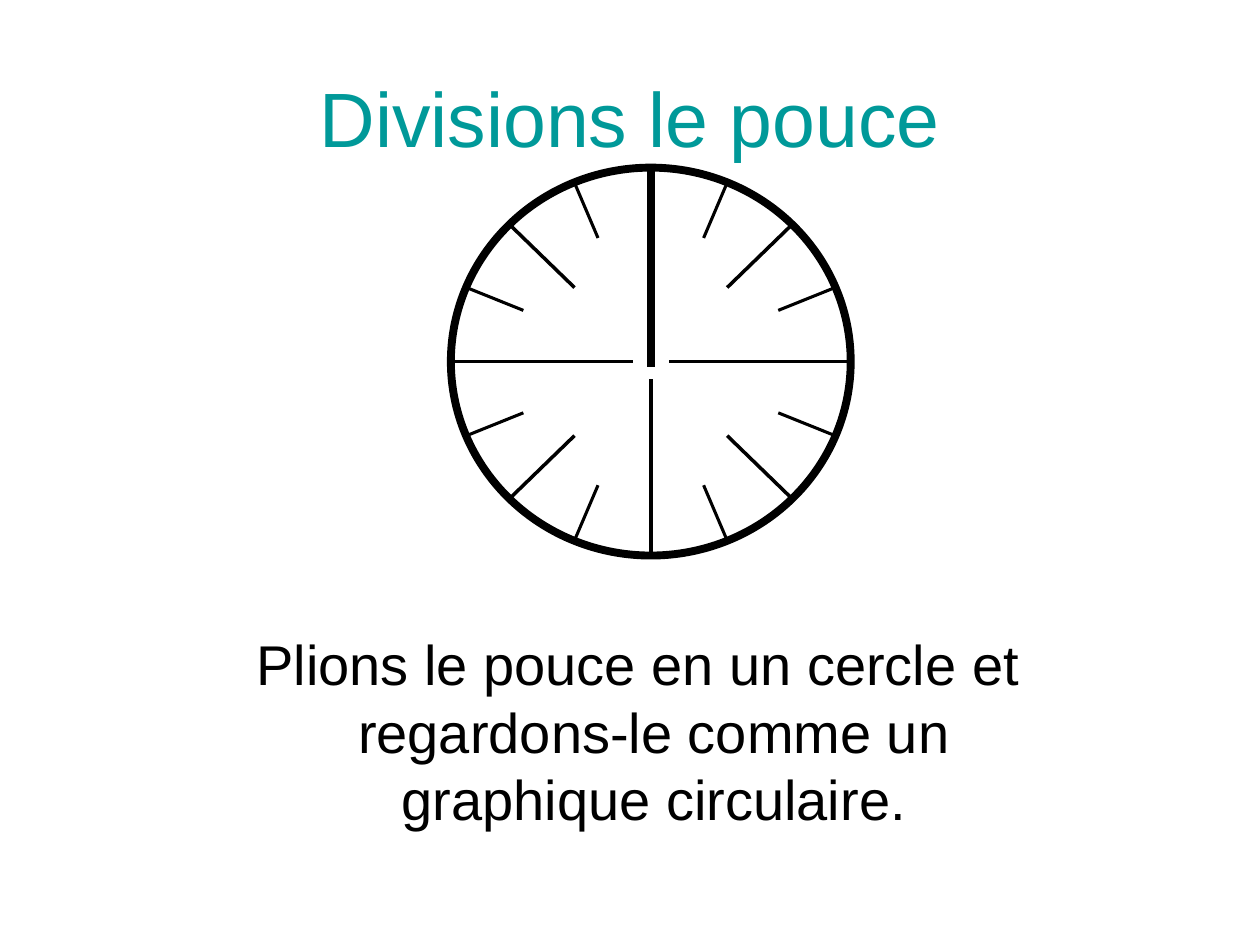
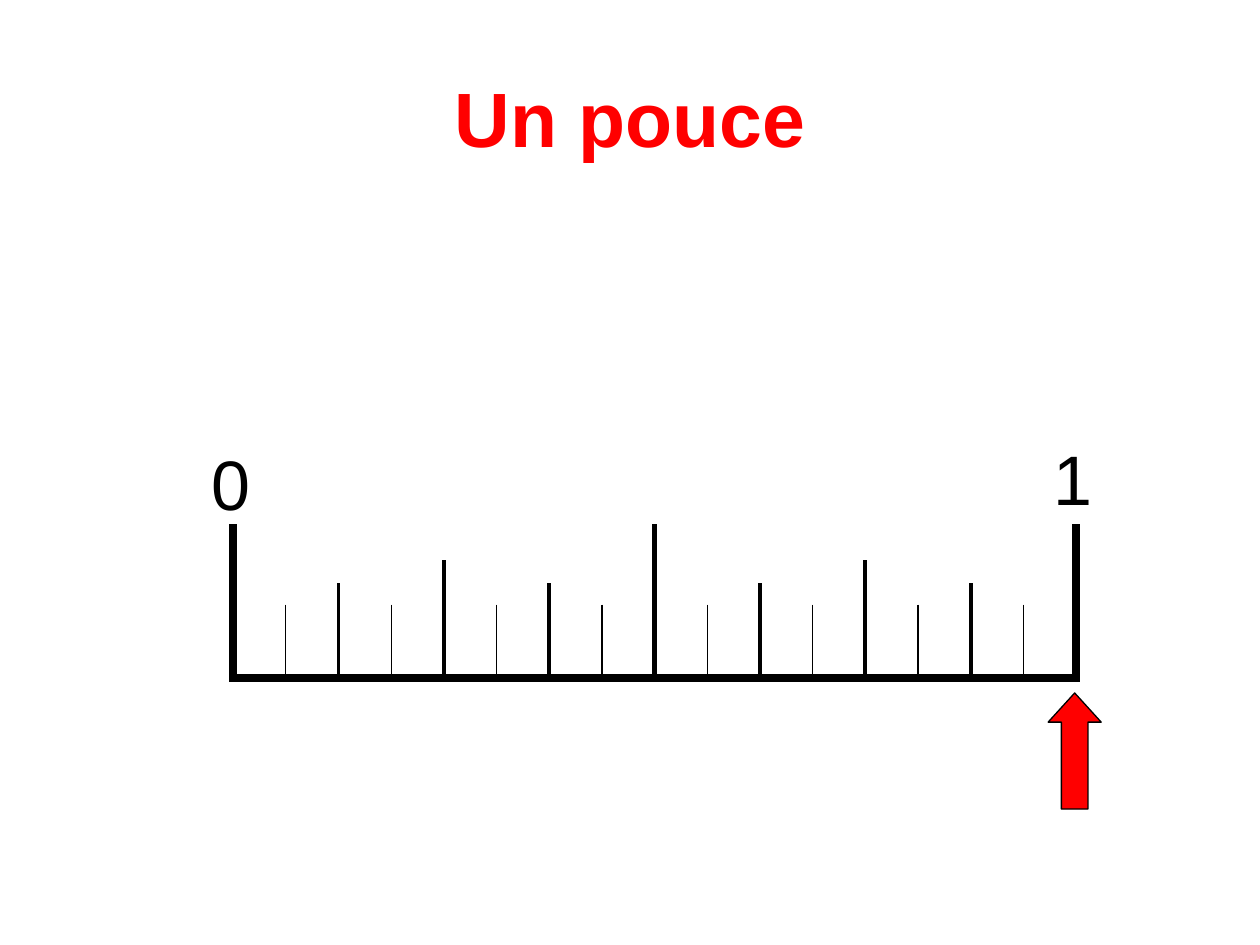
from dataclasses import dataclass
from math import cos, radians, sin

from lxml import etree
from pptx import Presentation
from pptx import util as u
from pptx.dml.color import RGBColor
from pptx.enum import shapes, text
from pptx.oxml.ns import qn

BLACK, WHITE, RED, TEAL = "000000", "FFFFFF", "FF0000", "009999"
FONT = "Arial"
TITLE_BOX = (1.27, 0.76, 22.86, 3.18)
BODY_BOX = (4.47, 12.57, 16.48, 6.02)

MID_X, MID_Y, RAD_X, RAD_Y = 13.12, 7.29, 4.03, 3.91

ZERO, INCH, BASE = 4.7, 21.69, 13.67
PARTS = 16


@dataclass(frozen=True)
class Mark:
    step: int
    size: float
    width: float


@dataclass(frozen=True)
class Label:
    words: str
    box: tuple[float, float, float, float]


SPOKES = (Mark(4, 0.9, 2), Mark(2, 0.45, 2), Mark(1, 0.3, 1.75))
TICKS = (
    Mark(16, 3.1, 4.5),
    Mark(8, 3.1, 3),
    Mark(4, 2.38, 2.25),
    Mark(2, 1.91, 2.25),
    Mark(1, 1.48, 0.75),
)
LABELS = (
    Label("0", (4.01, 8.76, 2.54, 1.96)),
    Label("1", (20.98, 8.66, 2.11, 1.96)),
)


def color(code: str) -> RGBColor:
    return RGBColor.from_string(code)


def cms(*nums: float) -> list[u.Cm]:
    return [u.Cm(num) for num in nums]


def apply(item, **vals) -> None:
    for key, val in vals.items():
        setattr(item, key, val)


def place(shape, box: tuple) -> None:
    apply(shape, **dict(zip(("left", "top", "width", "height"), cms(*box))))


def write(shape, words: str, size: float, code: str = BLACK,
          bold: bool = False, align=text.PP_ALIGN.CENTER):
    frame = shape.text_frame
    frame.word_wrap = True
    para = frame.paragraphs[0]
    para.alignment = align
    run = para.add_run()
    run.text = words
    apply(run.font, name=FONT, size=u.Pt(size), bold=bold)
    run.font.color.rgb = color(code)
    return para


def add_page(deck, layout: int, words: str, code: str, bold: bool = False):
    page = deck.slides.add_slide(deck.slide_layouts[layout])
    title = page.shapes.title
    place(title, TITLE_BOX)
    title.text_frame.vertical_anchor = text.MSO_ANCHOR.MIDDLE
    write(title, words, 44, code, bold)
    return page


def draw_line(group, start: tuple, end: tuple, width: float) -> None:
    line = group.shapes.add_connector(
        shapes.MSO_CONNECTOR.STRAIGHT, *cms(*start, *end))
    line.line.color.rgb = color(BLACK)
    line.line.width = u.Pt(width)
    etree.SubElement(line._element.spPr, qn("a:effectLst"))


def draw_shape(owner, kind, box: tuple, fill: str, width: float):
    shape = owner.shapes.add_shape(kind, *cms(*box))
    shape.shadow.inherit = False
    shape.fill.solid()
    shape.fill.fore_color.rgb = color(fill)
    shape.line.color.rgb = color(BLACK)
    shape.line.width = u.Pt(width)
    return shape


def pick(marks: tuple[Mark, ...], num: int) -> Mark:
    return next(mark for mark in marks if num % mark.step == 0)


def rim(num: int, part: float) -> tuple[float, float]:
    turn = radians(num * 360 / PARTS)
    return MID_X + RAD_X * part * sin(turn), MID_Y - RAD_Y * part * cos(turn)


def draw_dial(page) -> None:
    group = page.shapes.add_group_shape()
    box = (MID_X - RAD_X, MID_Y - RAD_Y, 2 * RAD_X, 2 * RAD_Y)
    draw_shape(group, shapes.MSO_SHAPE.OVAL, box, WHITE, 4.5)
    draw_line(group, rim(0, 1), rim(0, -0.03), 4.5)
    for num in range(1, PARTS):
        mark = pick(SPOKES, num)
        draw_line(group, rim(num, 0.99), rim(num, 0.99 - mark.size), mark.width)


def draw_ruler(page) -> None:
    group = page.shapes.add_group_shape()
    draw_line(group, (ZERO - 0.08, BASE), (INCH + 0.08, BASE), 4.5)
    for num in range(PARTS + 1):
        mark = pick(TICKS, num)
        left = ZERO + num * (INCH - ZERO) / PARTS
        draw_line(group, (left, BASE - mark.size), (left, BASE), mark.width)
    for label in LABELS:
        box = group.shapes.add_textbox(*cms(*label.box))
        write(box, label.words, 40, align=text.PP_ALIGN.LEFT)


def dial_page(deck) -> None:
    page = add_page(deck, 1, "Divisions le pouce", TEAL)
    draw_dial(page)
    body = page.placeholders[1]
    place(body, BODY_BOX)
    para = write(
        body,
        " Plions le pouce en un cercle et regardons-le comme un graphique circulaire.",
        32)
    props = para._p.get_or_add_pPr()
    for key, val in {"marL": 0.95, "indent": -0.95}.items():
        props.set(key, str(u.Cm(val)))
    etree.SubElement(props, qn("a:buNone"))


def ruler_page(deck) -> None:
    page = add_page(deck, 5, "Un pouce", RED, True)
    draw_ruler(page)
    arrow = draw_shape(page, shapes.MSO_SHAPE.UP_ARROW,
                       (21.13, 13.97, 1.07, 2.34), RED, 0.75)
    for num, val in enumerate((0.5, 0.55)):
        arrow.adjustments[num] = val


def main() -> None:
    deck = Presentation()
    apply(deck, slide_width=u.Cm(25.4), slide_height=u.Cm(19.05))
    dial_page(deck)
    ruler_page(deck)
    deck.save("out.pptx")


if __name__ == "__main__":
    main()
